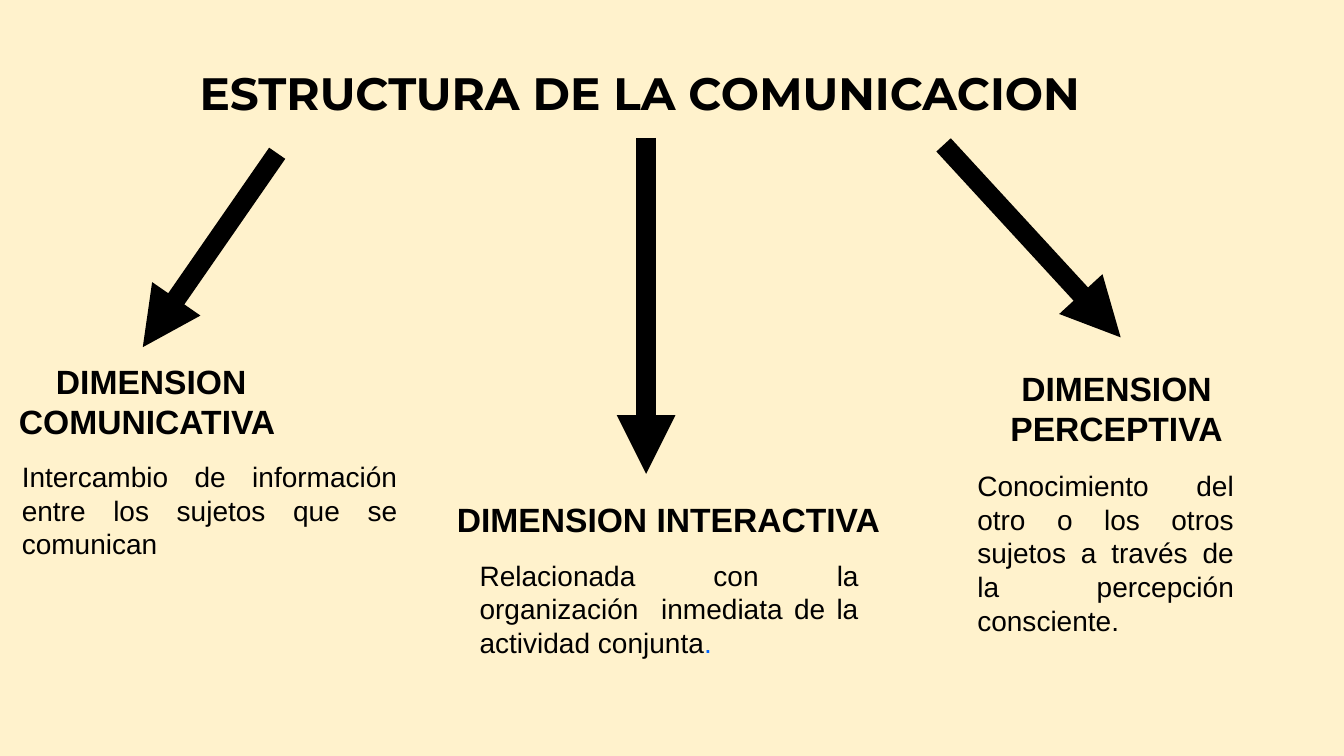
from lxml import etree
from pptx import Presentation
from pptx import util as u
from pptx.dml.color import RGBColor
from pptx.enum import shapes, text
from pptx.oxml.ns import qn

BLACK = RGBColor(0, 0, 0)
BLUE = RGBColor(0x00, 0x66, 0xFF)
CREAM = RGBColor(0xFF, 0xF2, 0xCC)
CENTER = text.PP_ALIGN.CENTER
JUST = text.PP_ALIGN.JUSTIFY


def write(slide, box, runs, size=20, font="Arial", bold=False,
          align=JUST, anchor=text.MSO_ANCHOR.TOP):
    """Place a text box; runs is a list of (words, colour)."""
    frame = slide.shapes.add_textbox(*map(u.Pt, box)).text_frame
    frame.word_wrap = True
    frame.vertical_anchor = anchor
    para = frame.paragraphs[0]
    para.alignment = align
    for words, color in runs:
        run = para.add_run()
        run.text = words
        run.font.size = u.Pt(size)
        run.font.name = font
        run.font.bold = bold
        run.font.color.rgb = color


def arrow(slide, start, end):
    line = slide.shapes.add_connector(
        shapes.MSO_CONNECTOR.STRAIGHT, *map(u.Pt, start + end))
    line.line.color.rgb = BLACK
    line.line.width = u.Pt(14)
    tail = etree.SubElement(line.line._get_or_add_ln(), qn("a:tailEnd"))
    tail.set("type", "triangle")
    etree.SubElement(line._element.spPr, qn("a:effectLst"))


def title(slide, box):
    write(slide, box, [("ESTRUCTURA DE LA COMUNICACION", BLACK)], size=32.4,
          font="Montserrat", bold=True, align=CENTER,
          anchor=text.MSO_ANCHOR.MIDDLE)


def branch(slide, box, start, tip, name, rows, inset, body, gap=6):
    """Arrow to a heading at the top of the box, with its text below."""
    x, y, w, h = box
    left, right = inset
    high = 7.2 + 29 * rows
    arrow(slide, start, (x + tip[0], y + tip[1]))
    write(slide, (x, y, w, high), [(name, BLACK)], size=24, bold=True,
          align=CENTER)
    write(slide, (x + left, y + high + gap, w - left - right, h - high - gap),
          body)


def main():
    deck = Presentation()
    deck.slide_width, deck.slide_height = u.Pt(960), u.Pt(540)
    slide = deck.slides.add_slide(deck.slide_layouts[6])
    slide.background.fill.solid()
    slide.background.fill.fore_color.rgb = CREAM

    title(slide, (55.5, 33, 803, 65.5))

    # The three dimensions, left to right
    branch(slide, (0, 254, 216, 150), (198, 109.5), (102, -6),
           "DIMENSION COMUNICATIVA ", 2, (8.5, -75),
           [("Intercambio de información entre los sujetos que se comunican",
             BLACK)], gap=5.5)
    branch(slide, (300, 353, 355, 122), (461.5, 98.5), (161.5, -14.5),
           "DIMENSION INTERACTIVA", 1, (35.5, 34.5),
           [("Relacionada con la organización  inmediata de la actividad "
             "conjunta", BLACK), (".", BLUE)])
    branch(slide, (679, 259, 237, 200), (674, 103.5), (121.5, -18),
           "DIMENSION PERCEPTIVA", 2, (12, 27.5),
           [("Conocimiento del otro o los otros sujetos a través de la "
             "percepción consciente.", BLACK)], gap=7)

    deck.save("out.pptx")


if __name__ == "__main__":
    main()
